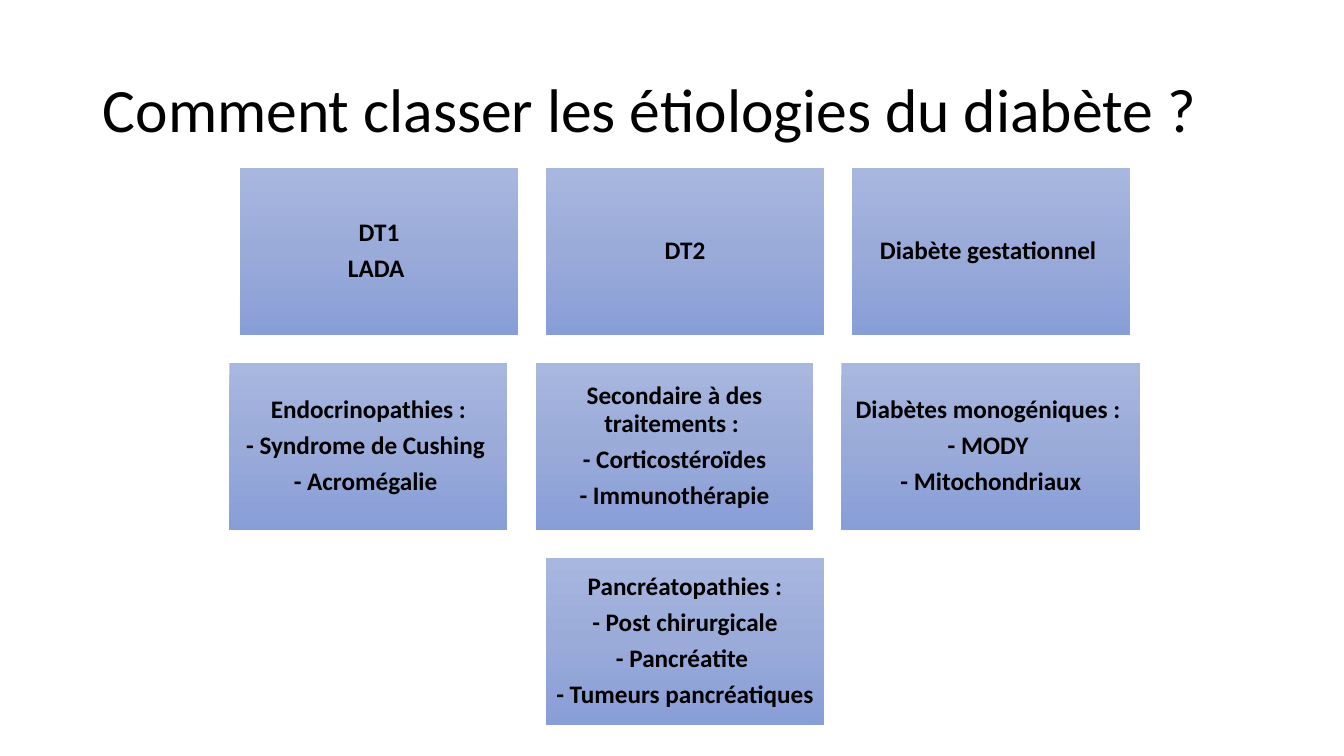
import copy
import pptx
import pptx.dml.color
import pptx.enum.shapes
import pptx.enum.text
import pptx.oxml.ns
import pptx.util

TITLE = "Comment classer les étiologies du diabète ?"

# Each row holds (width in px, lines of text)
ROWS = [
    [
        (278, ["DT1", "LADA "]),
        (278, ["DT2"]),
        (278, ["Diabète gestationnel "]),
    ],
    [
        (278, ["Endocrinopathies :", "- Syndrome de Cushing ", "- Acromégalie "]),
        (278, ["Secondaire à des traitements : ", "- Corticostéroïdes", "- Immunothérapie"]),
        (299, ["Diabètes monogéniques : ", "- MODY ", "- Mitochondriaux"]),
    ],
    [
        (278, ["Pancréatopathies :", "- Post chirurgicale", "- Pancréatite ", "- Tumeurs pancréatiques"]),
    ],
]

THEME = {
    "font": "Calibri",
    "text": "000000",
    "gradient": ["A8B7DF", "9AABD9", "889ED7"],
    "title_size": 44,
    "box_size": 18,
}

PAGE_WIDTH, PAGE_HEIGHT = 1344, 756
TITLE_AREA = (93, 40, 1159, 146)
ROWS_CENTER, ROWS_TOP = 685, 168
BOX_HEIGHT, GAP, INSET = 167, 28, 7
LINE_SPACING = 0.9
SPACE_AFTER = 0.35


def px(length):
    return pptx.util.Emu(round(length * 914400 / 100.8))


def rgb(color):
    return pptx.dml.color.RGBColor.from_string(color)


def write_lines(frame, lines, size, bold=False, align=None, space_after=0):
    frame.word_wrap = True
    frame.vertical_anchor = pptx.enum.text.MSO_ANCHOR.MIDDLE
    frame.text = "\n".join(lines)
    for para in frame.paragraphs:
        para.alignment = align
        para.line_spacing = LINE_SPACING
        para.space_after = pptx.util.Pt(space_after)
        for span in para.runs:
            span.font.name = THEME["font"]
            span.font.size = pptx.util.Pt(size)
            span.font.bold = bold
            span.font.color.rgb = rgb(THEME["text"])


def fill_gradient(box):
    """Fill from top to bottom with the three theme colours."""
    box.fill.gradient()
    box.fill.gradient_angle = 270
    stops = box._element.spPr.find(".//" + pptx.oxml.ns.qn("a:gsLst"))
    stops.insert(1, copy.deepcopy(stops[0]))
    for index, color in enumerate(THEME["gradient"]):
        stop = box.fill.gradient_stops[index]
        stop.position = index / 2
        stop.color.rgb = rgb(color)


def add_box(page, left, top, width, lines):
    box = page.shapes.add_shape(
        pptx.enum.shapes.MSO_SHAPE.RECTANGLE, px(left), px(top), px(width), px(BOX_HEIGHT)
    )
    box.shadow.inherit = False
    box.line.fill.background()
    fill_gradient(box)
    frame = box.text_frame
    frame.margin_left = frame.margin_right = px(INSET)
    frame.margin_top = frame.margin_bottom = px(INSET)
    size = THEME["box_size"]
    write_lines(frame, lines, size, True, pptx.enum.text.PP_ALIGN.CENTER, size * SPACE_AFTER)


def main():
    deck = pptx.Presentation()
    deck.slide_width, deck.slide_height = px(PAGE_WIDTH), px(PAGE_HEIGHT)
    page = deck.slides.add_slide(deck.slide_layouts[6])

    title = page.shapes.add_textbox(*map(px, TITLE_AREA))
    write_lines(title.text_frame, [TITLE], THEME["title_size"])

    for index, row in enumerate(ROWS):
        row_width = sum(width for width, lines in row) + GAP * (len(row) - 1)
        left = ROWS_CENTER - row_width / 2
        top = ROWS_TOP + index * (BOX_HEIGHT + GAP)
        for width, lines in row:
            add_box(page, left, top, width, lines)
            left += width + GAP

    deck.save("out.pptx")


if __name__ == "__main__":
    main()
